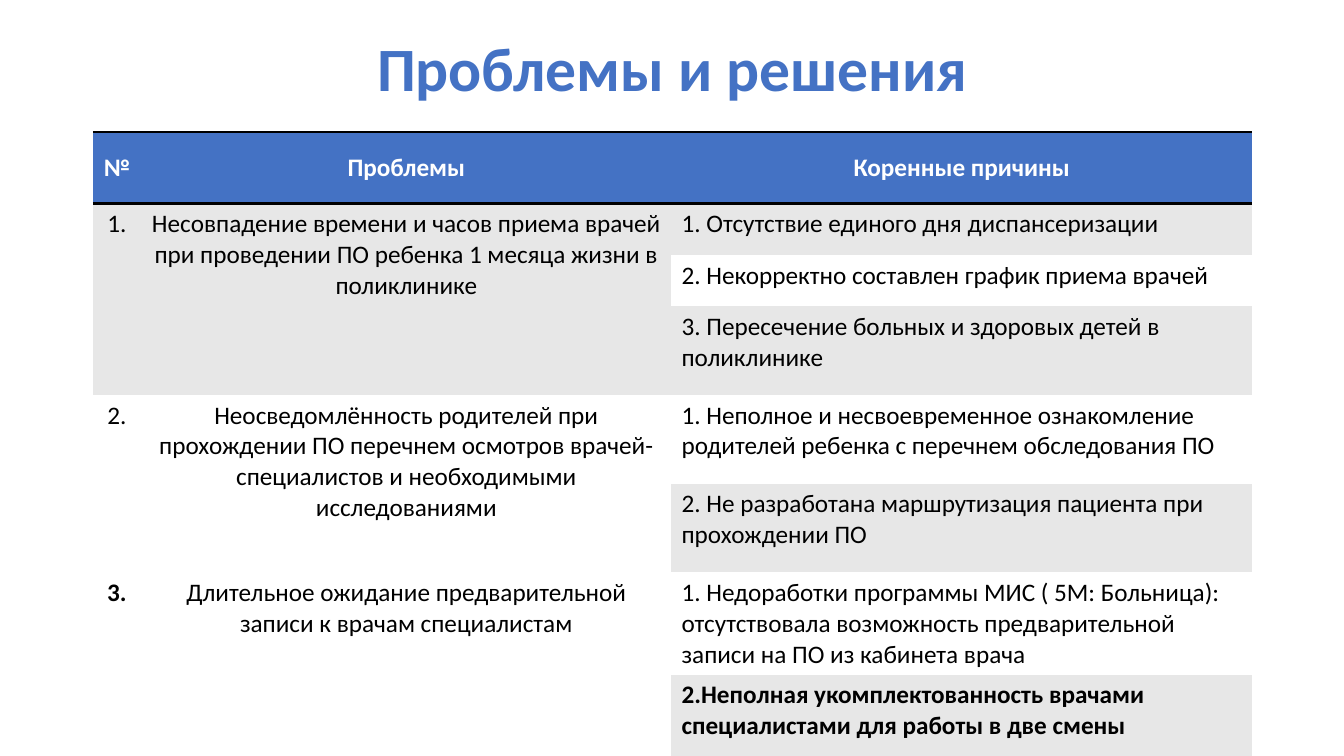
from lxml import etree
from pptx import Presentation
from pptx import util as u
from pptx.dml.color import RGBColor
from pptx.enum import text
from pptx.oxml.ns import qn

FONT = "Calibri"
COLORS = {"blue": "4472C4", "white": "FFFFFF", "black": "000000", "band": "E7E7E7"}
CENTER, LEFT = text.PP_ALIGN.CENTER, text.PP_ALIGN.LEFT
TOP, MIDDLE = text.MSO_ANCHOR.TOP, text.MSO_ANCHOR.MIDDLE

HEADERS = ["№", "Проблемы", "Коренные причины"]
PROBLEMS = [
    ("Несовпадение времени и часов приема врачей при проведении ПО ребенка "
     "1 месяца жизни в поликлинике",
     ["1. Отсутствие единого дня диспансеризации",
      "2. Некорректно составлен график приема врачей",
      "3. Пересечение больных и здоровых детей в поликлинике"]),
    ("Неосведомлённость родителей при прохождении ПО перечнем осмотров врачей- "
     "специалистов и необходимыми исследованиями",
     ["1. Неполное и несвоевременное ознакомление родителей ребенка с перечнем "
      "обследования ПО",
      "2. Не разработана маршрутизация пациента при прохождении ПО"]),
    ("Длительное ожидание предварительной записи к врачам специалистам",
     ["1. Недоработки программы МИС ( 5М: Больница): отсутствовала возможность "
      "предварительной записи на ПО из кабинета врача",
      "2.Неполная укомплектованность врачами специалистами для работы в две смены"]),
]
COL_WIDTHS = [0.48, 5.26, 5.76]
ROW_HEIGHTS = [0.71, 0.51, 0.51, 0.88, 0.88, 0.88, 0.51, 0.88]


def rgb(name):
    return RGBColor.from_string(COLORS[name])


def write(tf, content, size=18, color="black", bold=False, align=LEFT, spacing=None):
    p = tf.paragraphs[0]
    p.alignment = align
    p.line_spacing = spacing
    r = p.add_run()
    r.text = content
    r.font.name = FONT
    r.font.size = u.Pt(size)
    r.font.bold = bold
    r.font.color.rgb = rgb(color)


def set_borders(cell, ruled):
    """Draw black lines on the sides in ruled and clear the other sides."""
    tc_pr = cell._tc.get_or_add_tcPr()
    for side in "LRTB":
        ln = etree.SubElement(tc_pr, qn("a:ln" + side))
        if side in ruled:
            ln.set("w", str(u.Pt(2)))
            fill = etree.SubElement(ln, qn("a:solidFill"))
            etree.SubElement(fill, qn("a:srgbClr")).set("val", COLORS["black"])
        else:
            etree.SubElement(ln, qn("a:noFill"))


def style_cell(cell, fill, ruled):
    set_borders(cell, ruled)
    cell.fill.solid()
    cell.fill.fore_color.rgb = rgb(fill)


def add_title(s, left, top, width, height):
    title = s.shapes.title
    title.left, title.top = u.Inches(left), u.Inches(top)
    title.width, title.height = u.Inches(width), u.Inches(height)
    tf = title.text_frame
    tf.auto_size = text.MSO_AUTO_SIZE.NONE
    tf.vertical_anchor = MIDDLE
    write(tf, "Проблемы и решения", size=44, color="blue", bold=True,
          align=CENTER, spacing=0.9)


def add_problem_table(s, left, top, width, height):
    last = len(ROW_HEIGHTS) - 1
    table = s.shapes.add_table(last + 1, len(HEADERS), u.Inches(left), u.Inches(top),
                               u.Inches(width), u.Inches(height)).table
    for column, size in zip(table.columns, COL_WIDTHS):
        column.width = u.Inches(size)
    for row, size in zip(table.rows, ROW_HEIGHTS):
        row.height = u.Inches(size)

    for col, header in enumerate(HEADERS):
        cell = table.cell(0, col)
        style_cell(cell, "blue", "TB")
        cell.vertical_anchor = MIDDLE
        write(cell.text_frame, header, color="white", bold=True, align=CENTER)

    first = 1
    for number, (problem, causes) in enumerate(PROBLEMS, 1):
        end = first + len(causes) - 1
        group_fill = "band" if number == 1 else "white"
        for row, cause in enumerate(causes, first):
            ruled = ("T" if row == 1 else "") + ("B" if row == last else "")
            cause_fill = "band" if row % 2 else "white"
            # The closing group starts on an odd row but keeps a white first cause
            if number == len(PROBLEMS):
                cause_fill = "band" if row == last else "white"
            for col, fill in enumerate([group_fill, group_fill, cause_fill]):
                style_cell(table.cell(row, col), fill, ruled)
            write(table.cell(row, 2).text_frame, cause, bold=row == last)
        for col, content in enumerate([f"{number}.", problem]):
            cell = table.cell(first, col)
            cell.merge(table.cell(end, col))
            cell.vertical_anchor = TOP
            write(cell.text_frame, content, align=CENTER,
                  bold=col == 0 and number == len(PROBLEMS))
        first = end + 1


def main():
    prs = Presentation()
    prs.slide_width, prs.slide_height = u.Inches(13.33), u.Inches(7.5)
    s = prs.slides.add_slide(prs.slide_layouts[5])
    add_title(s, 0.92, 0.32, 11.5, 0.78)
    add_problem_table(s, 0.92, 1.31, sum(COL_WIDTHS), sum(ROW_HEIGHTS))
    prs.save("out.pptx")


if __name__ == "__main__":
    main()
